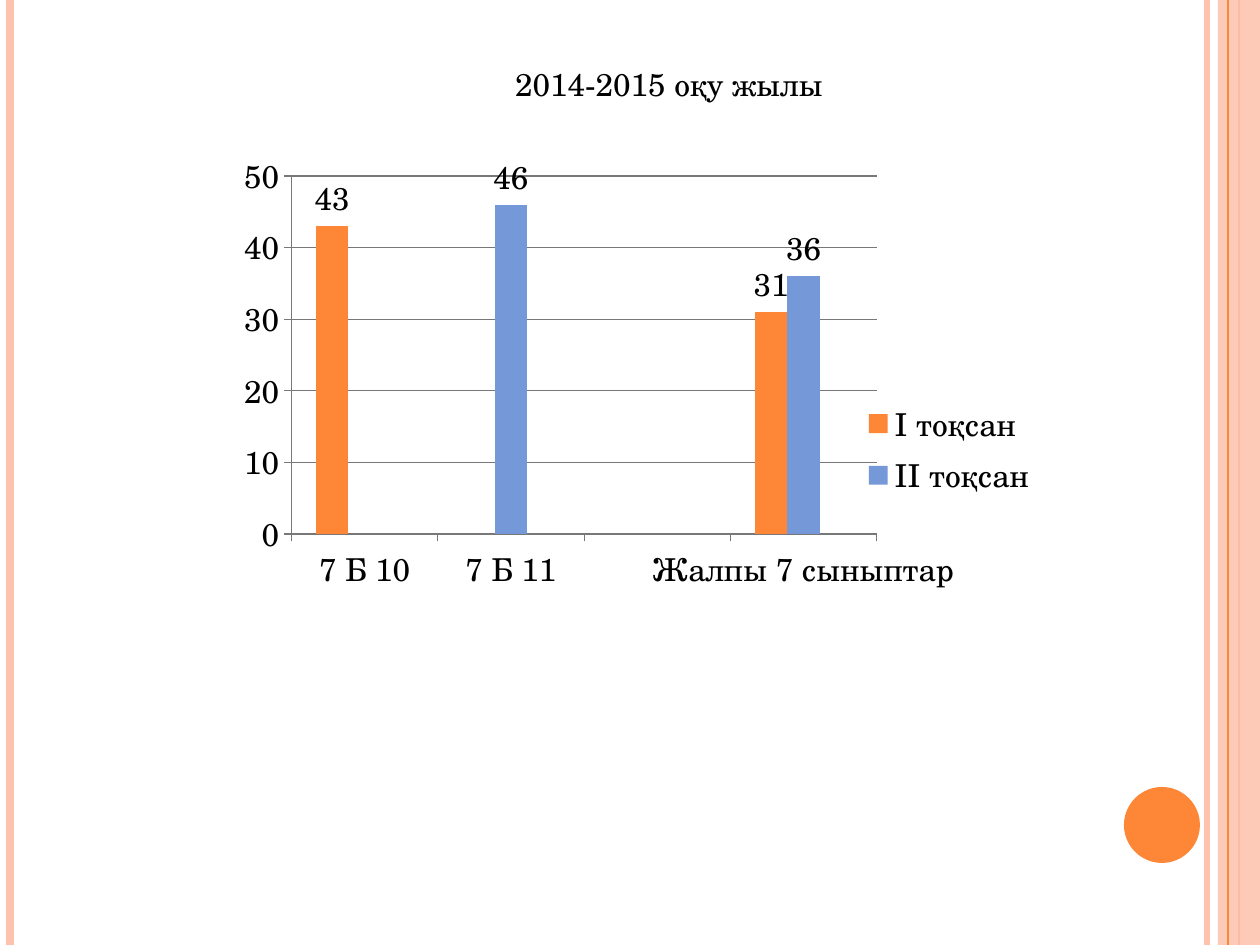
import pptx
import pptx.util
import pptx.dml.color
import pptx.chart.data
import pptx.enum.chart
import pptx.enum.shapes
import pptx.enum.text
import pptx.oxml
import pptx.oxml.ns
from lxml import etree

PX = 914400 // 126
FONT = "TeX Gyre Schola"
qn = pptx.oxml.ns.qn


def rgb(c):
    return pptx.dml.color.RGBColor.from_string(c)


def set_layout(parent, index, x, y, w, h, inner=False):
    for old in parent.findall(qn("c:layout")):
        parent.remove(old)
    target = '<c:layoutTarget val="inner"/>' if inner else ""
    parent.insert(index, pptx.oxml.parse_xml(
        f'<c:layout {pptx.oxml.ns.nsdecls("c")}><c:manualLayout>{target}'
        '<c:xMode val="edge"/><c:yMode val="edge"/>'
        f'<c:x val="{x}"/><c:y val="{y}"/><c:w val="{w}"/><c:h val="{h}"/>'
        '</c:manualLayout></c:layout>'))


prs = pptx.Presentation()
prs.slide_width = 1260 * PX
prs.slide_height = 945 * PX
s = prs.slides.add_slide(prs.slide_layouts[5])

band = s.shapes.add_shape(pptx.enum.shapes.MSO_SHAPE.RECTANGLE,
                          1218 * PX, 0, 42 * PX, 945 * PX)
dot = s.shapes.add_shape(pptx.enum.shapes.MSO_SHAPE.OVAL,
                         1124 * PX, 787 * PX, 76 * PX, 76 * PX)
for sp, color in ((band, "FEC3AE"), (dot, "FE8637")):
    sp.shadow.inherit = False
    sp.fill.solid()
    sp.fill.fore_color.rgb = rgb(color)
    sp.line.fill.background()
fill_color = band.fill._xPr.find(qn("a:solidFill"))[0]
etree.SubElement(fill_color, qn("a:alpha"), val="87000")

for x, color, width in ((1207, "FEC3AE", 3), (10, "FEC3AE", 4.5),
                        (1239, "FE8637", 1.5), (1228, "FE8637", 0.75)):
    line = s.shapes.add_connector(pptx.enum.shapes.MSO_CONNECTOR.STRAIGHT,
                                  x * PX, 0, x * PX, 945 * PX)
    line.line.color.rgb = rgb(color)
    line.line.width = pptx.util.Pt(width)
    etree.SubElement(line._element.spPr, qn("a:effectLst"))
    if x == 1239:
        s.shapes._spTree.remove(line._element)
        band._element.addprevious(line._element)

data = pptx.chart.data.CategoryChartData()
data.categories = ["7 Б 10", "7 Б 11", "", "Жалпы 7 сыныптар"]
data.add_series("І тоқсан", (43, None, None, 31))
data.add_series("ІІ тоқсан", (None, 46, None, 36))
data.add_series("Series 3", (None, None, None, None))
chart = s.shapes.add_chart(pptx.enum.chart.XL_CHART_TYPE.COLUMN_CLUSTERED,
                           210 * PX, 147 * PX, 840 * PX, 605 * PX, data).chart
chart.has_title = False
chart.font.name = FONT
chart.font.size = pptx.util.Pt(18)
chart.font.color.rgb = rgb("000000")

plot = chart.plots[0]
plot.gap_width = 150
plot.overlap = 0
plot.vary_by_categories = False
for series, color in zip(plot.series, ("FE8637", "7598D9", "B32C16")):
    series.format.fill.solid()
    series.format.fill.fore_color.rgb = rgb(color)
    series.invert_if_negative = False
    if series.name != "Series 3":
        labels = series.data_labels
        labels.show_value = True
        labels.position = pptx.enum.chart.XL_LABEL_POSITION.OUTSIDE_END

va = chart.value_axis
va.minimum_scale, va.maximum_scale, va.major_unit = 0, 50, 10
va.has_major_gridlines = True
for fmt in (va.format, chart.category_axis.format, va.major_gridlines.format):
    fmt.line.color.rgb = rgb("787878")
    fmt.line.width = pptx.util.Pt(0.75)
for axis in (va, chart.category_axis):
    axis.major_tick_mark = pptx.enum.chart.XL_TICK_MARK.OUTSIDE

chart.has_legend = True
chart.legend.position = pptx.enum.chart.XL_LEGEND_POSITION.RIGHT
chart.legend.include_in_layout = False
legend = chart.legend._element
entry = pptx.oxml.parse_xml(
    f'<c:legendEntry {pptx.oxml.ns.nsdecls("c")}><c:idx val="2"/><c:delete val="1"/></c:legendEntry>')
legend.insert(1, entry)
set_layout(legend, 2, 0.77, 0.41, 0.22, 0.18)
set_layout(chart._chartSpace.chart.plotArea, 0, 0.097, 0.048, 0.697, 0.592, inner=True)

title = s.shapes.title
title.left, title.top, title.width, title.height = 393 * PX, 59 * PX, 552 * PX, 127 * PX
tf = title.text_frame
tf.word_wrap = True
tf.auto_size = pptx.enum.text.MSO_AUTO_SIZE.NONE
tf.vertical_anchor = pptx.enum.text.MSO_ANCHOR.TOP
p = tf.paragraphs[0]
p.text = "2014-2015 оқу жылы"
p.alignment = pptx.enum.text.PP_ALIGN.CENTER
p.font.name = FONT
p.font.size = pptx.util.Pt(18)
p.font.color.rgb = rgb("000000")

prs.save("out.pptx")
